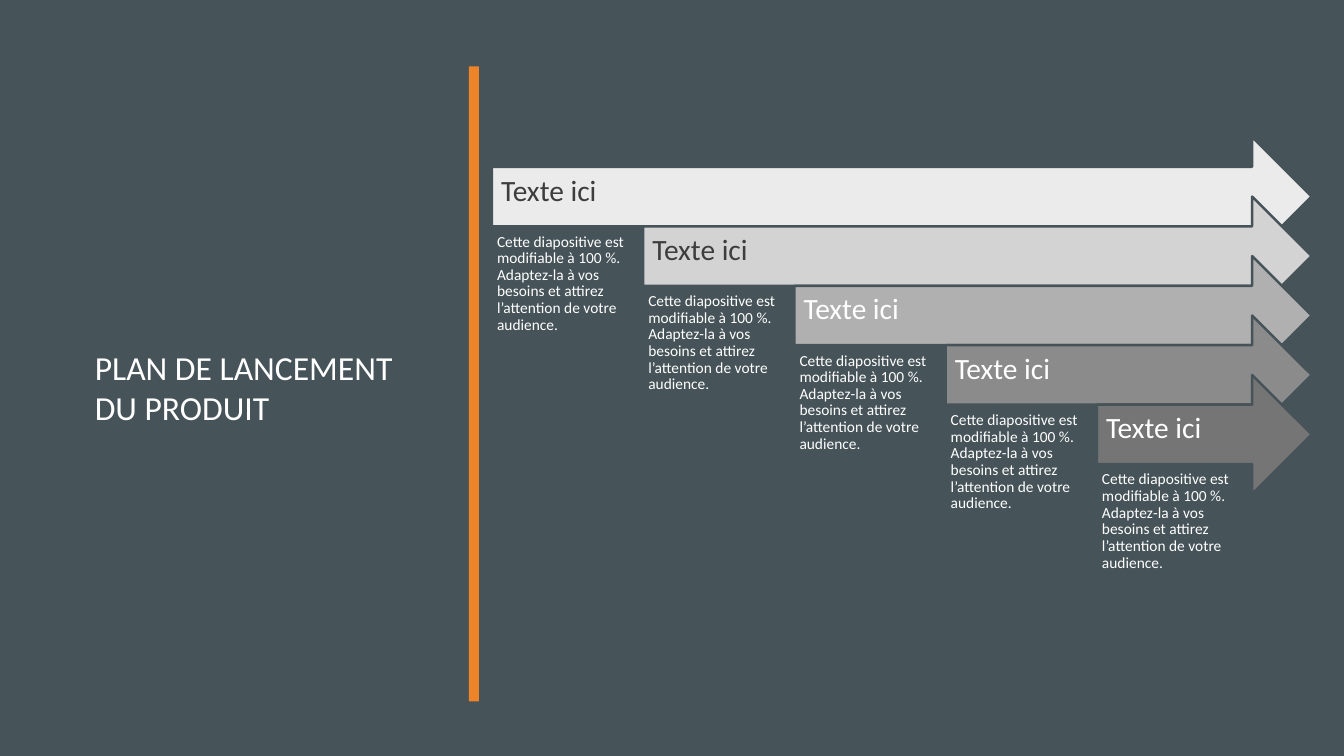
from pptx import Presentation
from pptx.dml.color import RGBColor
from pptx.enum.shapes import MSO_SHAPE as Shape
from pptx.enum.text import MSO_ANCHOR as Anchor, PP_ALIGN as Align
from pptx.util import Inches, Pt

# Colours
SLATE = RGBColor(0x46, 0x53, 0x59)
ORANGE = RGBColor(0xED, 0x84, 0x28)
WHITE = RGBColor(0xFF, 0xFF, 0xFF)
DARK = RGBColor(0x3D, 0x3D, 0x3D)
GREYS = [RGBColor(v, v, v) for v in (0xEB, 0xD3, 0xB0, 0x8B, 0x75)]

# Content
TITLE = "PLAN DE LANCEMENT DU PRODUIT"
DETAIL = ("Cette diapositive est modifiable à 100 %. Adaptez-la à vos besoins "
          "et attirez l’attention de votre audience.")
STAGES = [  # heading, heading colour, arrow fill, detail
    ("Texte ici", DARK, GREYS[0], DETAIL),
    ("Texte ici", DARK, GREYS[1], DETAIL),
    ("Texte ici", WHITE, GREYS[2], DETAIL),
    ("Texte ici", WHITE, GREYS[3], DETAIL),
    ("Texte ici", WHITE, GREYS[4], DETAIL),
]

# Staircase grid, in inches
LEFT, TOP, RIGHT = 4.88, 1.36, 13.01
COLUMN, ROW = 1.5, 0.59
ARROW_HEIGHT = 2 * ROW
DETAIL_DROP, DETAIL_HEIGHT = 0.91, 2.17


def write(holder, text, size, color, anchor=Anchor.TOP, spacing=0.9,
          insets=(0.05, 0.05, 0.05, 0.05)):
    frame = holder.text_frame
    frame.word_wrap = True
    frame.vertical_anchor = anchor
    (frame.margin_left, frame.margin_top,
     frame.margin_right, frame.margin_bottom) = map(Inches, insets)
    frame.text = text
    paragraph = frame.paragraphs[0]
    paragraph.alignment = Align.LEFT
    paragraph.line_spacing = spacing
    font = paragraph.runs[0].font
    font.name, font.size, font.color.rgb = "Calibri", Pt(size), color


def add_filled(kind, box, color):
    shape = slide.shapes.add_shape(kind, *map(Inches, box))
    shape.shadow.inherit = False
    shape.fill.solid()
    shape.fill.fore_color.rgb = color
    shape.line.fill.background()
    return shape


prs = Presentation()
prs.slide_width, prs.slide_height = Inches(13.33), Inches(7.5)
slide = prs.slides.add_slide(prs.slide_layouts[5])
slide.background.fill.solid()
slide.background.fill.fore_color.rgb = SLATE

# Title and divider
title = slide.shapes.title
title.left, title.top, title.width, title.height = map(
    Inches, (0.84, 2.9, 3.32, 1.88))
write(title, TITLE, 24, WHITE, anchor=Anchor.MIDDLE, spacing=1.0,
      insets=(0.1, 0.05, 0.1, 0.05))
add_filled(Shape.RECTANGLE, (4.65, 0.66, 0.1, 6.3), ORANGE)

# Each stage starts one column later and one row lower
for step, (heading, heading_color, fill, detail) in enumerate(STAGES):
    x, y = LEFT + step * COLUMN, TOP + step * ROW
    arrow = add_filled(Shape.RIGHT_ARROW, (x, y, RIGHT - x, ARROW_HEIGHT), fill)
    arrow.line.color.rgb = SLATE
    arrow.line.width = Pt(1.75)
    write(arrow, heading, 21, heading_color, anchor=Anchor.MIDDLE,
          insets=(0.09, 0.09, 0.28, 0.19))
    detail_box = slide.shapes.add_textbox(*map(
        Inches, (x, y + DETAIL_DROP, COLUMN, DETAIL_HEIGHT)))
    write(detail_box, detail, 11, WHITE)

prs.save("out.pptx")
